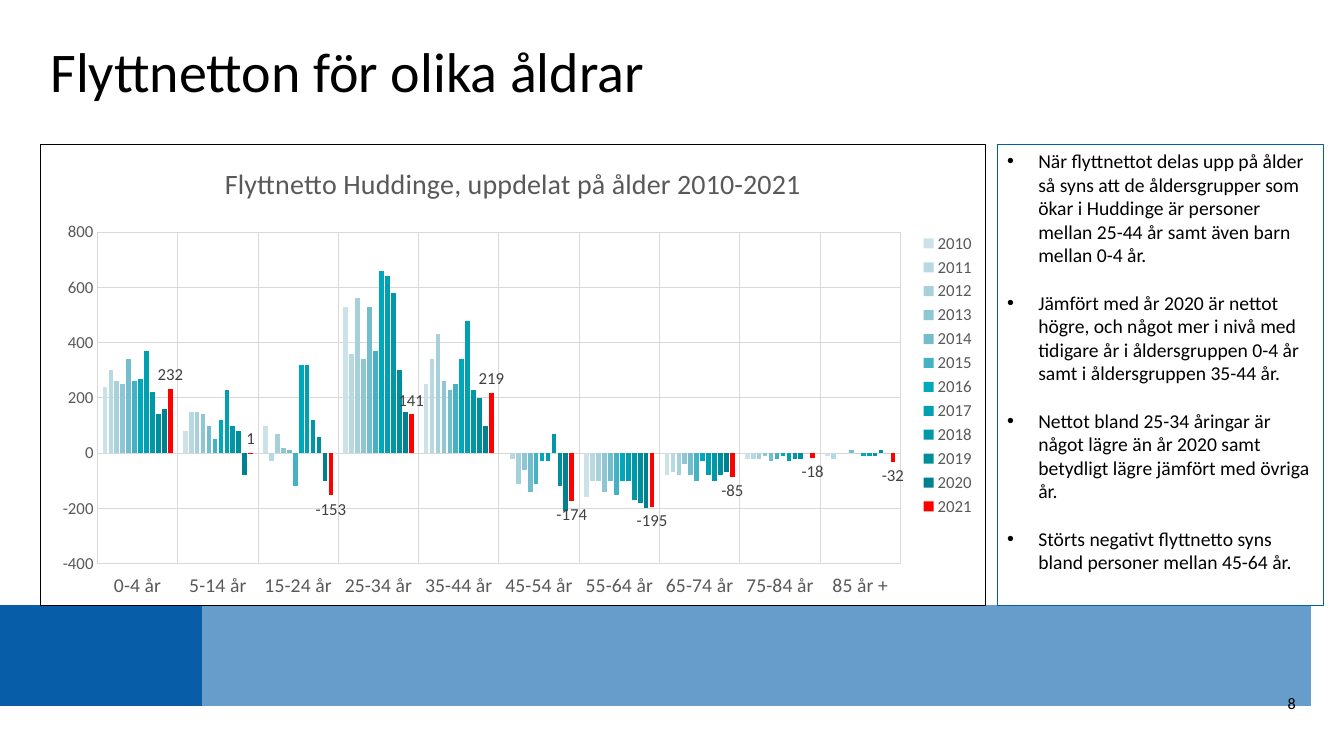
from dataclasses import dataclass
from lxml import etree
from pptx import Presentation, util as u
from pptx.chart.data import CategoryChartData
from pptx.dml.color import RGBColor
from pptx.enum import chart as ch, shapes, text
from pptx.oxml import parse_xml
from pptx.oxml.ns import nsdecls, qn


@dataclass(frozen=True)
class Theme:
    font: str = "Calibri"
    black: str = "000000"
    dark_blue: str = "085DA9"
    light_blue: str = "669DCB"
    grey: str = "595959"
    label: str = "404040"
    grid: str = "D9D9D9"
    title: float = 40
    chart_title: float = 20
    body: float = 14
    small: float = 12
    page: float = 11.5


T = Theme()

AGES = ["0-4 år", "5-14 år", "15-24 år", "25-34 år", "35-44 år",
        "45-54 år", "55-64 år", "65-74 år", "75-84 år", "85 år +"]
NET_MOVES = [
    ("2010", "CBE2E8", [240, 80, 100, 530, 250, 0, -160, -80, -20, -10]),
    ("2011", "B9D9E1", [300, 150, -30, 360, 340, -20, -100, -70, -20, -20]),
    ("2012", "A6D0DA", [260, 150, 70, 560, 430, -110, -100, -80, -20, 0]),
    ("2013", "8EC7D3", [250, 140, 20, 340, 260, -60, -140, -40, -10, 0]),
    ("2014", "73BDCC", [340, 100, 10, 530, 230, -140, -100, -80, -30, 10]),
    ("2015", "45B2C4", [260, 50, -120, 370, 250, -110, -150, -100, -20, 0]),
    ("2016", "00A8BB", [270, 120, 320, 660, 340, -30, -100, -30, -10, -10]),
    ("2017", "00A0B1", [370, 230, 320, 640, 480, -30, -100, -80, -30, -10]),
    ("2018", "0097A7", [220, 100, 120, 580, 230, 70, -170, -100, -20, -10]),
    ("2019", "008D9C", [140, 80, 60, 300, 200, -120, -180, -80, -20, 10]),
    ("2020", "00818F", [160, -80, -100, 150, 100, -210, -200, -70, 0, 0]),
    ("2021", "FF0000", [232, 1, -153, 141, 219, -174, -195, -85, -18, -32]),
]
COMMENTS = [
    "När flyttnettot delas upp på ålder så syns att de åldersgrupper som ökar i "
    "Huddinge är personer mellan 25-44 år samt även barn mellan 0-4 år.",
    "Jämfört med år 2020 är nettot högre, och något mer i nivå med tidigare år i "
    "åldersgruppen 0-4 år samt i åldersgruppen 35-44 år.",
    "Nettot bland 25-34 åringar är något lägre än år 2020 samt betydligt lägre "
    "jämfört med övriga år.",
    "Störts negativt flyttnetto syns bland personer mellan 45-64 år.",
]


def rgb(value):
    return RGBColor.from_string(value)


def style(font, size, color=T.black):
    font.name, font.size, font.bold = T.font, u.Pt(size), False
    font.color.rgb = rgb(color)


def outline(line, color):
    line.color.rgb = rgb(color)
    line.width = u.Pt(0.75)


def inches(box):
    return [u.Inches(v) for v in box]


def add_band(s, box):
    x, y, w, h = box
    split, slant, gap = 2.13, 0.06, 0.06
    left = [(x, y), (x + split, y), (x + split - slant, y + h), (x, y + h)]
    right = [(x + split + gap, y), (x + w, y), (x + w, y + h), (x + split, y + h)]
    for points, color in ((right, T.light_blue), (left, T.dark_blue)):
        builder = s.shapes.build_freeform(*points[0], scale=u.Inches(1))
        builder.add_line_segments(points[1:], close=True)
        sp = builder.convert_to_shape()
        sp.shadow.inherit = False
        sp.fill.solid()
        sp.fill.fore_color.rgb = rgb(color)
        sp.line.fill.background()


def add_title(s, box):
    sp = s.shapes.title
    sp.left, sp.top, sp.width, sp.height = inches(box)
    tf = sp.text_frame
    tf.text = "Flyttnetton för olika åldrar"
    tf.vertical_anchor = text.MSO_ANCHOR.TOP
    p = tf.paragraphs[0]
    p.alignment = text.PP_ALIGN.LEFT
    p.line_spacing = 0.9
    style(p.runs[0].font, T.title)


def add_page_number(s, box):
    tf = s.shapes.add_textbox(*inches(box)).text_frame
    tf.word_wrap = True
    tf.vertical_anchor = text.MSO_ANCHOR.MIDDLE
    tf.text = "8"
    p = tf.paragraphs[0]
    p.alignment = text.PP_ALIGN.RIGHT
    style(p.runs[0].font, T.page)


def add_comments(s, box):
    sp = s.shapes.add_shape(shapes.MSO_SHAPE.RECTANGLE, *inches(box))
    sp.shadow.inherit = False
    sp.fill.background()
    outline(sp.line, T.dark_blue)
    tf = sp.text_frame
    tf.word_wrap = True
    tf.vertical_anchor = text.MSO_ANCHOR.TOP
    tf.text = "\n".join(COMMENTS)
    for p in tf.paragraphs:
        p.alignment = text.PP_ALIGN.LEFT
        pPr = p._p.get_or_add_pPr()
        pPr.set("marL", str(u.Inches(0.31)))
        pPr.set("indent", str(u.Inches(-0.31)))
        etree.SubElement(pPr, qn("a:buFont")).set("typeface", "Arial")
        etree.SubElement(pPr, qn("a:buChar")).set("char", "•")
        style(p.runs[0].font, T.body)
    for p in tf.paragraphs[:-1]:
        p.space_after = u.Pt(17)


def format_axis(axis, size):
    style(axis.tick_labels.font, size, T.grey)
    axis.major_tick_mark = axis.minor_tick_mark = ch.XL_TICK_MARK.NONE
    axis.has_major_gridlines = True
    outline(axis.major_gridlines.format.line, T.grid)


def place_plot(chart, x, y, w, h):
    area = chart._chartSpace.chart.plotArea
    for old in area.findall(qn("c:layout")):
        area.remove(old)
    sizes = "".join(f'<c:{k} val="{v}"/>' for k, v in zip("xywh", (x, y, w, h)))
    area.insert(0, parse_xml(
        f'<c:layout {nsdecls("c")}><c:manualLayout><c:layoutTarget val="inner"/>'
        f'<c:xMode val="edge"/><c:yMode val="edge"/>{sizes}</c:manualLayout></c:layout>'))


def add_border(chart):
    chart._chartSpace.chart.addnext(parse_xml(
        f'<c:spPr {nsdecls("c", "a")}><a:noFill/><a:ln w="{u.Pt(0.75)}"><a:solidFill>'
        f'<a:srgbClr val="{T.black}"/></a:solidFill></a:ln></c:spPr>'))


def add_net_chart(s, box):
    data = CategoryChartData(number_format="0")
    data.categories = AGES
    for year, _, values in NET_MOVES:
        data.add_series(year, values)
    chart = s.shapes.add_chart(
        ch.XL_CHART_TYPE.COLUMN_CLUSTERED, *inches(box), data).chart
    style(chart.font, T.small)
    chart.has_title = True
    tf = chart.chart_title.text_frame
    tf.text = "Flyttnetto Huddinge, uppdelat på ålder 2010-2021"
    style(tf.paragraphs[0].runs[0].font, T.chart_title, T.grey)
    chart.chart_title.include_in_layout = False

    chart.has_legend = True
    chart.legend.position = ch.XL_LEGEND_POSITION.RIGHT
    chart.legend.include_in_layout = False
    style(chart.legend.font, T.small, T.grey)

    ages, net = chart.category_axis, chart.value_axis
    format_axis(ages, T.body)
    ages.tick_label_position = ch.XL_TICK_LABEL_POSITION.LOW
    outline(ages.format.line, T.grid)
    format_axis(net, T.small)
    net.format.line.fill.background()
    net.minimum_scale, net.maximum_scale, net.major_unit = -400, 800, 200
    net.tick_labels.number_format = "0"
    net.tick_labels.number_format_is_linked = False

    plot = chart.plots[0]
    plot.gap_width, plot.overlap, plot.vary_by_categories = 219, -27, False
    for series, (_, color, _) in zip(plot.series, NET_MOVES):
        series.invert_if_negative = False
        series.format.fill.solid()
        series.format.fill.fore_color.rgb = rgb(color)
    labels = plot.series[-1].data_labels
    labels.show_value = True
    labels.position = ch.XL_LABEL_POSITION.OUTSIDE_END
    labels.number_format, labels.number_format_is_linked = "0", False
    style(labels.font, T.small, T.label)
    place_plot(chart, 0.06, 0.19, 0.85, 0.72)
    add_border(chart)


def main():
    prs = Presentation()
    prs.slide_width, prs.slide_height = u.Inches(13.33), u.Inches(7.5)
    s = prs.slides.add_slide(prs.slide_layouts[5])
    add_band(s, (0, 6.42, 13.33, 0.76))
    add_title(s, (0.4, 0.39, 12.38, 0.8))
    add_page_number(s, (11.36, 6.77, 1.59, 0.4))
    add_comments(s, (9.89, 1.43, 3.24, 4.58))
    add_net_chart(s, (0.4, 1.43, 9.38, 4.58))
    prs.save("out.pptx")


if __name__ == "__main__":
    main()
